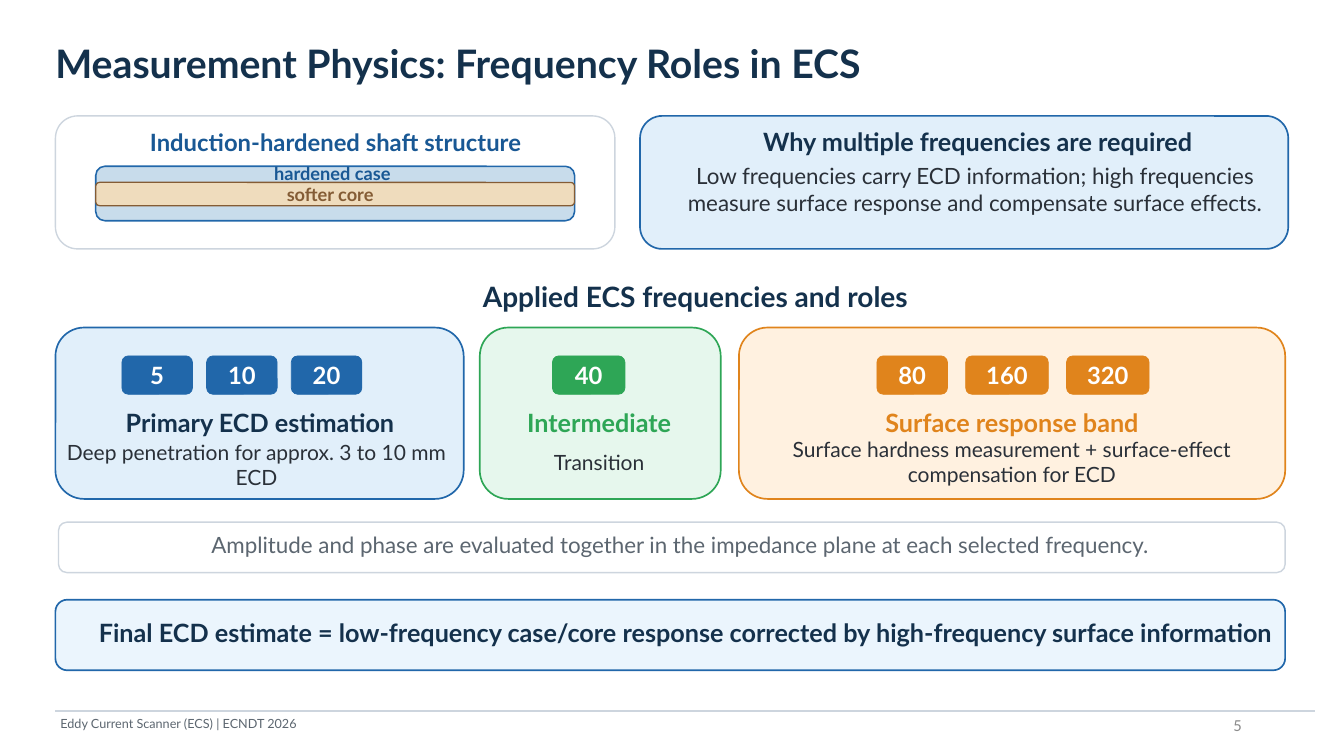
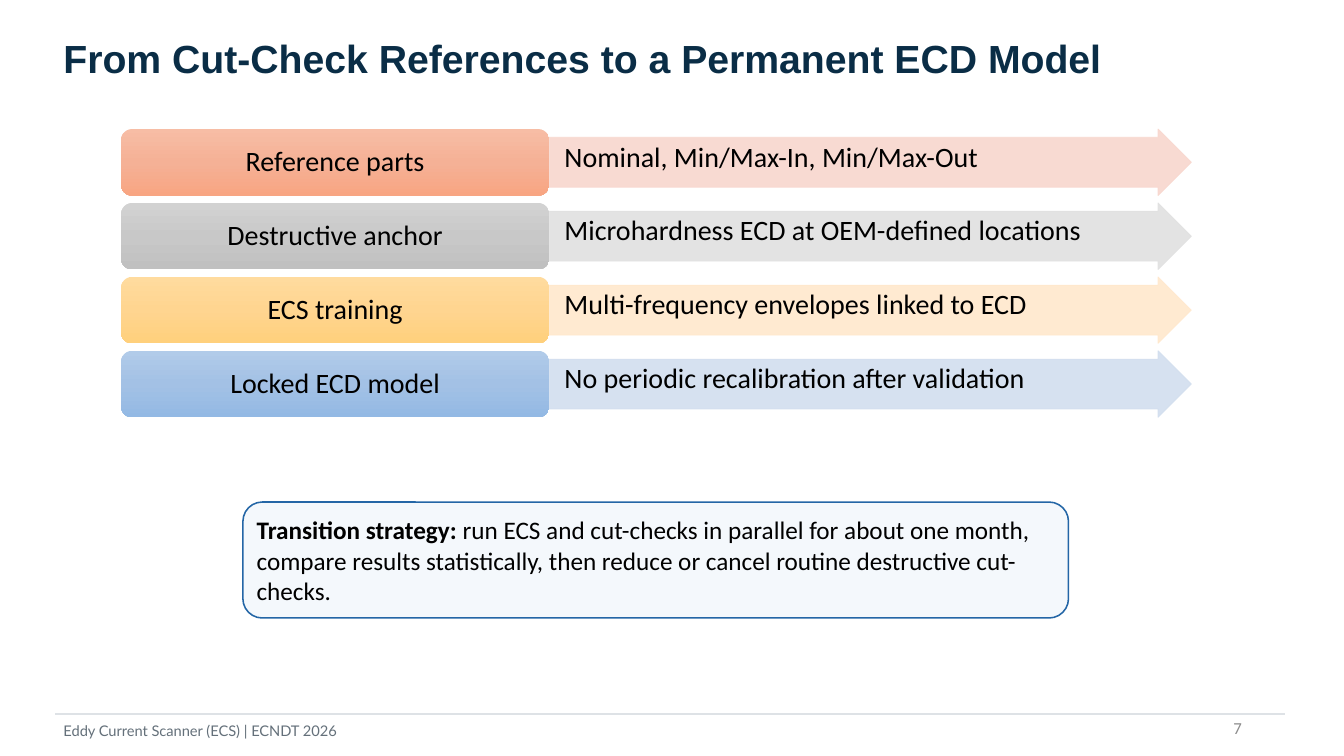
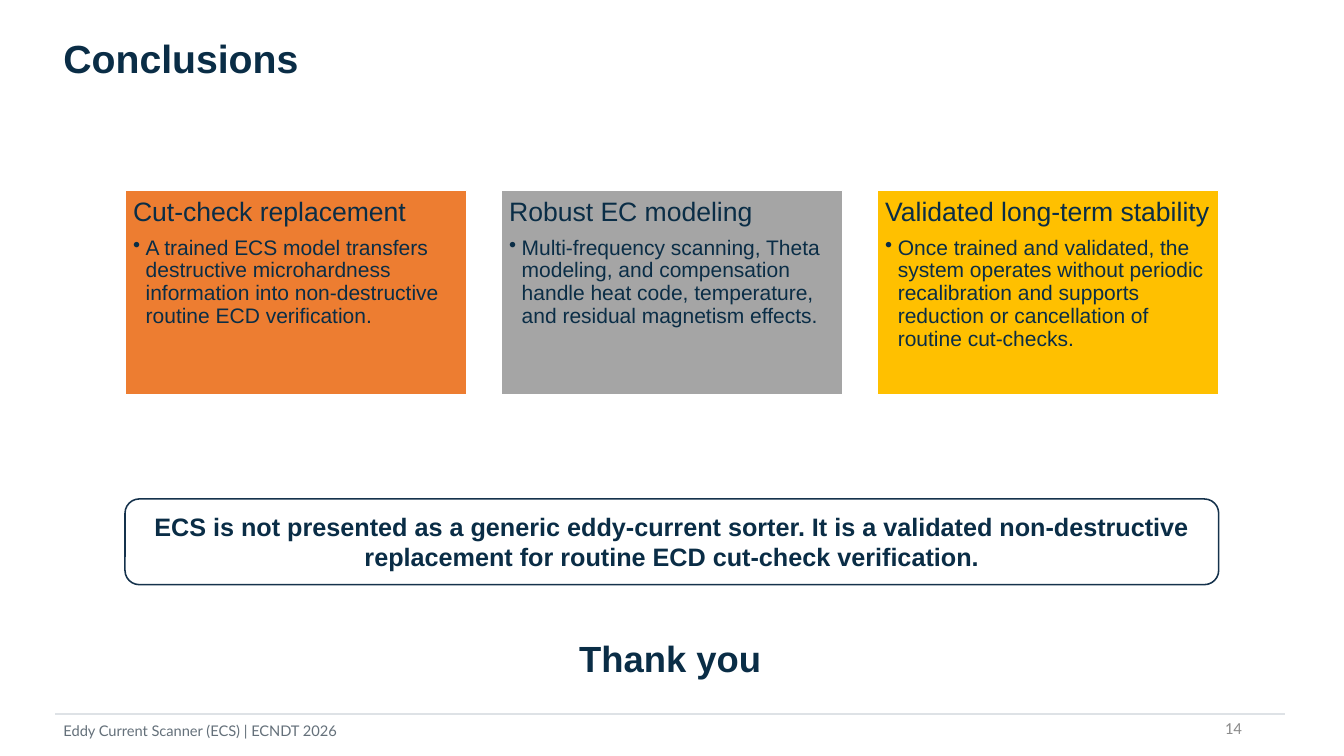
import copy

import pptx
import pptx.dml.color
import pptx.enum.shapes
import pptx.enum.text
import pptx.oxml.ns
import pptx.util
from lxml import etree

Pt = pptx.util.Pt
RGBColor = pptx.dml.color.RGBColor
qn = pptx.oxml.ns.qn
Preset = pptx.enum.shapes.MSO_SHAPE
Anchor = pptx.enum.text.MSO_ANCHOR
Align = pptx.enum.text.PP_ALIGN

WHITE = RGBColor(0xFF, 0xFF, 0xFF)
BLACK = RGBColor(0x00, 0x00, 0x00)
NAVY = RGBColor(0x14, 0x31, 0x4C)
DEEP_NAVY = RGBColor(0x0A, 0x2D, 0x46)
OUTLINE_NAVY = RGBColor(0x15, 0x32, 0x4C)
DARK_BLUE = RGBColor(0x19, 0x58, 0x94)
BLUE = RGBColor(0x21, 0x67, 0xAA)
CALLOUT_BLUE = RGBColor(0x24, 0x66, 0xA6)
PALE_BLUE = RGBColor(0xE1, 0xEF, 0xFA)
RESULT_BLUE = RGBColor(0xEB, 0xF5, 0xFD)
CALLOUT_FILL = RGBColor(0xF4, 0xF8, 0xFC)
CASE_BLUE = RGBColor(0xC8, 0xDC, 0xEB)
CORE_TAN = RGBColor(0xEF, 0xDC, 0xBD)
BROWN = RGBColor(0x84, 0x5C, 0x35)
GREEN = RGBColor(0x2E, 0xA6, 0x56)
PALE_GREEN = RGBColor(0xE6, 0xF7, 0xED)
ORANGE = RGBColor(0xE0, 0x84, 0x1C)
PALE_ORANGE = RGBColor(0xFF, 0xF1, 0xE0)
INK = RGBColor(0x2A, 0x30, 0x38)
GRAY = RGBColor(0x5C, 0x66, 0x70)
FOOTER_GRAY = RGBColor(0x64, 0x70, 0x7A)
NUMBER_GRAY = RGBColor(0x8C, 0x8C, 0x8C)
BORDER = RGBColor(0xCD, 0xD5, 0xDE)
RULE = RGBColor(0xDE, 0xE2, 0xE6)
CONCLUSION_ORANGE = RGBColor(0xED, 0x7D, 0x31)
CONCLUSION_GRAY = RGBColor(0xA5, 0xA5, 0xA5)
CONCLUSION_GOLD = RGBColor(0xFF, 0xC0, 0x00)

TIGHT = (1.44, 1.44, 1.44, 1.44)
FLUSH = (0, 1.44, 0, 1.44)
ROOMY = (5.76, 2.88, 5.76, 2.88)
NORMAL = (7.2, 3.6, 7.2, 3.6)
FOOTER = "Eddy Current Scanner (ECS) | ECNDT 2026"


def add_box(slide, bounds, preset=None, fill=None, line=None, weight=1):
    lengths = [Pt(value) for value in bounds]
    if preset is None:
        return slide.shapes.add_textbox(*lengths)
    shape = slide.shapes.add_shape(preset, *lengths)
    shape.shadow.inherit = False
    if fill is not None:
        shape.fill.solid()
        shape.fill.fore_color.rgb = fill
    if line is None:
        shape.line.fill.background()
    else:
        shape.line.color.rgb = line
        shape.line.width = Pt(weight)
    return shape


def write(shape, text, font, color, align=Align.CENTER, margins=TIGHT,
          anchor=Anchor.MIDDLE, paragraph=None):
    frame = shape.text_frame
    frame_values = {"word_wrap": True, "vertical_anchor": anchor}
    for side, margin in zip(("left", "top", "right", "bottom"), margins):
        frame_values["margin_" + side] = Pt(margin)
    for name, value in frame_values.items():
        setattr(frame, name, value)
    if paragraph is None:
        paragraph = frame.add_paragraph() if frame.text else frame.paragraphs[0]
        paragraph.alignment = align
    run = paragraph.add_run()
    run.text = text
    family, size, bold = font
    for name, value in {"name": family, "size": Pt(size), "bold": bold}.items():
        setattr(run.font, name, value)
    run.font.color.rgb = color
    return paragraph


presentation = pptx.Presentation()
presentation.slide_width = Pt(960)
presentation.slide_height = Pt(540)

lato_frame = {
    "title": ((39.6, 25.2, 900, 39.6), ("Lato", 28, True), NAVY, FLUSH, Anchor.MIDDLE),
    "footer": ((43.2, 510.5, 302.4, 13), ("Lato", 9, False), GRAY, FLUSH, Anchor.MIDDLE),
    "rule": (508, 939.6, BORDER),
    "number_top": 503.3,
}
arial_frame = {
    "title": ((39.6, 21.6, 885.6, 39.6), ("Arial", 28, True), DEEP_NAVY, ROOMY, Anchor.TOP),
    "footer": ((39.6, 512.6, 633.6, 20.2), ("Lato", 10.5, False), FOOTER_GRAY, ROOMY, Anchor.TOP),
    "rule": (510.1, 918, RULE),
    "number_top": 505.4,
}

slides = []
for title, number, layout in (
    ("Measurement Physics: Frequency Roles in ECS", "5", lato_frame),
    ("From Cut-Check References to a Permanent ECD Model", "7", arial_frame),
    ("Conclusions", "14", arial_frame),
):
    slide = presentation.slides.add_slide(presentation.slide_layouts[6])
    slides.append(slide)
    for text, part in ((title, "title"), (FOOTER, "footer")):
        bounds, font, color, margins, anchor = layout[part]
        write(add_box(slide, bounds), text, font, color, Align.LEFT, margins, anchor)
    rule_top, rule_end, rule_color = layout["rule"]
    rule = slide.shapes.add_connector(
        pptx.enum.shapes.MSO_CONNECTOR.STRAIGHT,
        Pt(39.6), Pt(rule_top), Pt(rule_end), Pt(rule_top))
    rule.line.color.rgb = rule_color
    rule.line.width = Pt(1.2)
    etree.SubElement(rule._element.spPr, qn("a:effectLst"))
    write(add_box(slide, (678.2, layout["number_top"], 216, 28.8)), number,
          ("Calibri", 12, False), NUMBER_GRAY, Align.RIGHT, NORMAL)

physics_slide, model_slide, conclusions_slide = slides

for bounds, fill, line, weight in (
    ((39.6, 82.8, 399.6, 95), WHITE, BORDER, 1),
    ((68.4, 118.8, 342, 38.9), CASE_BLUE, BLUE, 1.1),
    ((68.4, 130.3, 342, 16.6), CORE_TAN, BROWN, 0.9),
    ((457.2, 82.8, 463, 95), PALE_BLUE, BLUE, 1.2),
    ((41.8, 373, 876.2, 36), WHITE, BORDER, 1),
    ((39.6, 428.4, 878.4, 50.4), RESULT_BLUE, BLUE, 1.2),
):
    add_box(physics_slide, bounds, Preset.ROUNDED_RECTANGLE, fill, line, weight)

for bounds, text, size, bold, color, align in (
    ((56.2, 92.2, 367.2, 18), "Induction-hardened shaft structure", 17, True, DARK_BLUE, Align.CENTER),
    ((194.4, 115.9, 118.8, 15.8), "hardened case", 13, True, DARK_BLUE, Align.LEFT),
    ((183.6, 131, 104.4, 15.8), "softer core", 13, True, BROWN, Align.CENTER),
    ((471.6, 92.2, 453.6, 18), "Why multiple frequencies are required", 18, True, NAVY, Align.CENTER),
    ((478.8, 115.2, 435.6, 39.6),
     "Low frequencies carry ECD information; high frequencies measure surface response "
     "and compensate surface effects.", 16, False, INK, Align.CENTER),
    ((43.2, 199.4, 907.2, 25.2), "Applied ECS frequencies and roles", 20, True, NAVY, Align.CENTER),
    ((54, 378.7, 864, 20.2),
     "Amplitude and phase are evaluated together in the impedance plane at each selected frequency.",
     16, False, GRAY, Align.CENTER),
    ((61.2, 435.6, 856.8, 32.4),
     "Final ECD estimate = low-frequency case/core response corrected by high-frequency surface information",
     18, True, NAVY, Align.CENTER),
):
    write(add_box(physics_slide, bounds), text, ("Lato", size, bold), color, align)

for left, width, fill, accent, chip_left, chip_gap, chips, heading, body in (
    (39.6, 291.6, PALE_BLUE, BLUE, 87.1, 10.1, (("5", 50.4), ("10", 50.4), ("20", 50.4)),
     ("Primary ECD estimation", NAVY, 54, 263.5),
     ("Deep penetration for approx. 3 to 10 mm ECD", (43.2, 311.8, 280.1, 39.6))),
    (342.7, 172.1, PALE_GREEN, GREEN, 394.6, 0, (("40", 51.8),),
     ("Intermediate", GREEN, 354.2, 147.6),
     ("Transition", (354.2, 315.4, 147.6, 28.8))),
    (527.8, 390.2, PALE_ORANGE, ORANGE, 626.4, 13, (("80", 50.4), ("160", 59), ("320", 59)),
     ("Surface response band", ORANGE, 547.2, 351.4),
     ("Surface hardness measurement + surface-effect compensation for ECD",
      (552.2, 315.4, 341.3, 28.8))),
):
    add_box(physics_slide, (left, 234, width, 122.4), Preset.ROUNDED_RECTANGLE, fill, accent, 1.2)
    for frequency, chip_width in chips:
        chip = add_box(physics_slide, (chip_left, 254.2, chip_width, 27.4),
                       Preset.ROUNDED_RECTANGLE, accent, accent, 0.5)
        write(chip, frequency, ("Lato", 17, True), WHITE)
        chip_left += chip_width + chip_gap
    heading_text, heading_color, heading_left, heading_width = heading
    write(add_box(physics_slide, (heading_left, 291.6, heading_width, 20.2)),
          heading_text, ("Lato", 18, True), heading_color)
    body_text, body_bounds = body
    write(add_box(physics_slide, body_bounds), body_text, ("Lato", 15, False), INK)

for row, (label, detail, arrow_color, gradient) in enumerate((
    ("Reference parts", "Nominal, Min/Max-In, Min/Max-Out",
     "F8D7CE", ("F7BDA5", "F5B196", "F8A582")),
    ("Destructive anchor", "Microhardness ECD at OEM-defined locations",
     "E1E1E1", ("D2D2D2", "C8C8C8", "C0C0C0")),
    ("ECS training", "Multi-frequency envelopes linked to ECD",
     "FFE8CC", ("FFDB9E", "FFD590", "FFD07C")),
    ("Locked ECD model", "No periodic recalibration after validation",
     "D2DEEF", ("B1CBE9", "A3C1E5", "93B9E4")),
)):
    top = 92.2 + row * 52.8
    tint = RGBColor.from_string(arrow_color)
    arrow = add_box(model_slide, (392.4, top, 458.6, 47.5), Preset.RIGHT_ARROW, tint, tint, 0.5)
    arrow.adjustments[0] = 0.75
    arrow.adjustments[1] = 0.5
    for color_element in arrow._element.spPr.iter(qn("a:srgbClr")):
        etree.SubElement(color_element, qn("a:alpha")).set("val", "90000")
    write(arrow, detail, ("Calibri", 20, False), BLACK, Align.LEFT,
          (10.8, 1.2, 0.72, 0.72), Anchor.TOP)

    step = add_box(model_slide, (86.4, top, 306, 47.5), Preset.ROUNDED_RECTANGLE)
    step.fill.gradient()
    step.fill.gradient_angle = 270
    stop_list = step._element.spPr.find(qn("a:gradFill")).find(qn("a:gsLst"))
    stop_list.append(copy.deepcopy(stop_list[0]))
    for stop, position, stop_color in zip(step.fill.gradient_stops, (0, 0.5, 1), gradient):
        stop.position = position
        stop.color.rgb = RGBColor.from_string(stop_color)
    paragraph = write(step, label, ("Calibri", 20, False), BLACK, margins=ROOMY)
    paragraph.line_spacing = 0.9

strategy = add_box(model_slide, (173.5, 358.6, 589.7, 82.8),
                   Preset.ROUNDED_RECTANGLE, CALLOUT_FILL, CALLOUT_BLUE, 1.1)
paragraph = write(strategy, "Transition strategy:", ("Calibri", 18, True), BLACK, Align.LEFT, ROOMY)
write(strategy,
      " run ECS and cut-checks in parallel for about one month, compare results statistically, "
      "then reduce or cancel routine destructive cut-checks.",
      ("Calibri", 18, False), BLACK, margins=ROOMY, paragraph=paragraph)

for column, (heading, detail, fill) in enumerate((
    ("Cut-check replacement",
     "A trained ECS model transfers destructive microhardness information into "
     "non-destructive routine ECD verification.", CONCLUSION_ORANGE),
    ("Robust EC modeling",
     "Multi-frequency scanning, Theta modeling, and compensation handle heat code, "
     "temperature, and residual magnetism effects.", CONCLUSION_GRAY),
    ("Validated long-term stability",
     "Once trained and validated, the system operates without periodic recalibration and "
     "supports reduction or cancellation of routine cut-checks.", CONCLUSION_GOLD),
)):
    card = add_box(conclusions_slide, (89.3 + column * 268.6, 136.1, 244.1, 146.2),
                   Preset.RECTANGLE, fill, WHITE, 1)
    for text, size, space_after in ((heading, 19, 7), (detail, 15, 2.5)):
        paragraph = write(card, text, ("Arial", size, False), DEEP_NAVY, Align.LEFT,
                          (5.76, 5.76, 5.76, 5.76), Anchor.TOP)
        paragraph.line_spacing = 0.9
        paragraph.space_after = Pt(space_after)
    properties = paragraph._p.get_or_add_pPr()
    properties.set("marL", str(Pt(9)))
    properties.set("indent", str(-Pt(9)))
    etree.SubElement(properties, qn("a:buChar")).set("char", "•")

message = add_box(conclusions_slide, (89.3, 356.4, 781.2, 61.2),
                  Preset.ROUNDED_RECTANGLE, WHITE, OUTLINE_NAVY, 1.1)
write(message,
      "ECS is not presented as a generic eddy-current sorter. It is a validated "
      "non-destructive replacement for routine ECD cut-check verification.",
      ("Arial", 18, True), DEEP_NAVY, margins=ROOMY)
write(add_box(conclusions_slide, (46.8, 451.4, 864, 38.2)), "Thank you",
      ("Arial", 26, True), DEEP_NAVY, margins=ROOMY, anchor=Anchor.TOP)

presentation.save("out.pptx")
